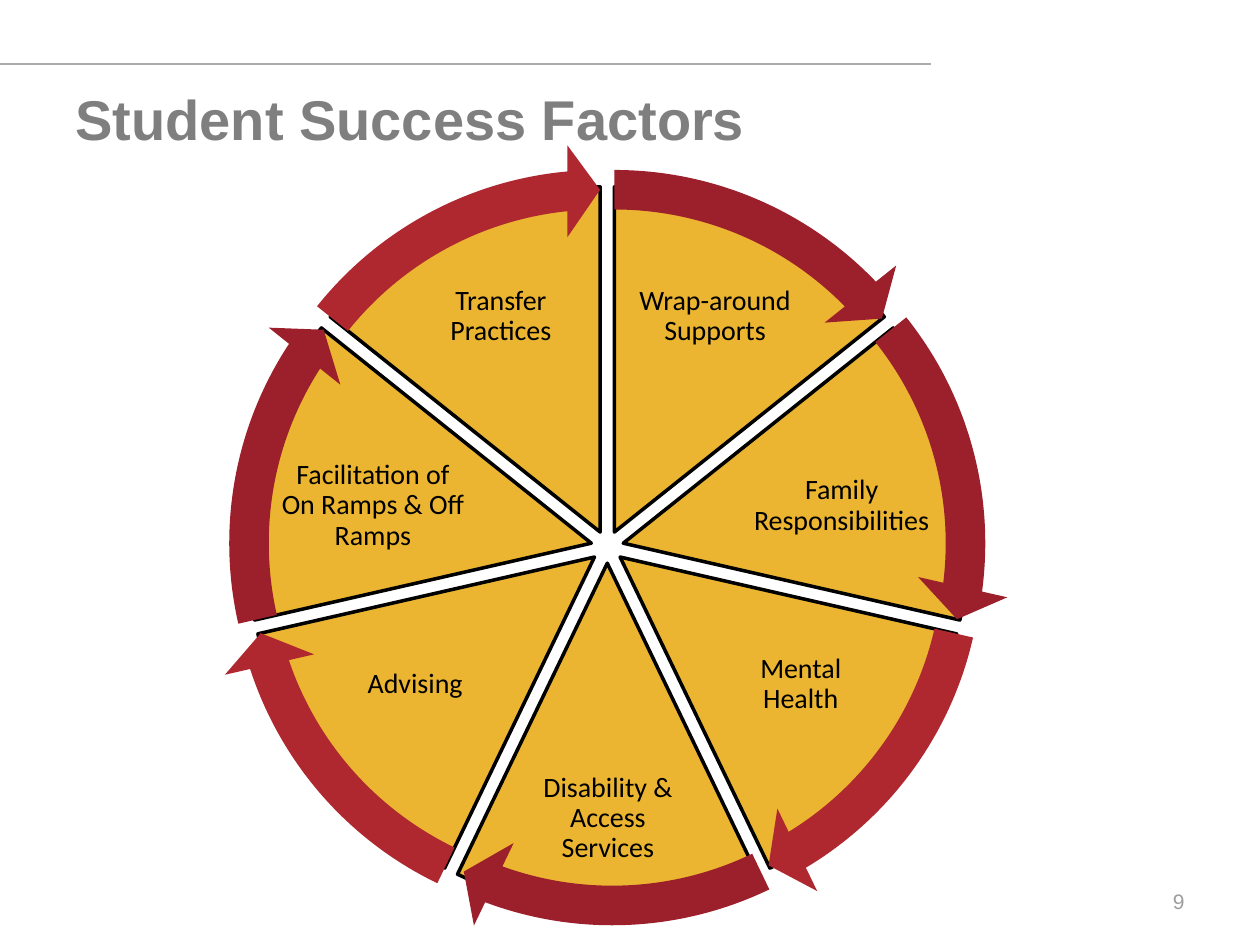
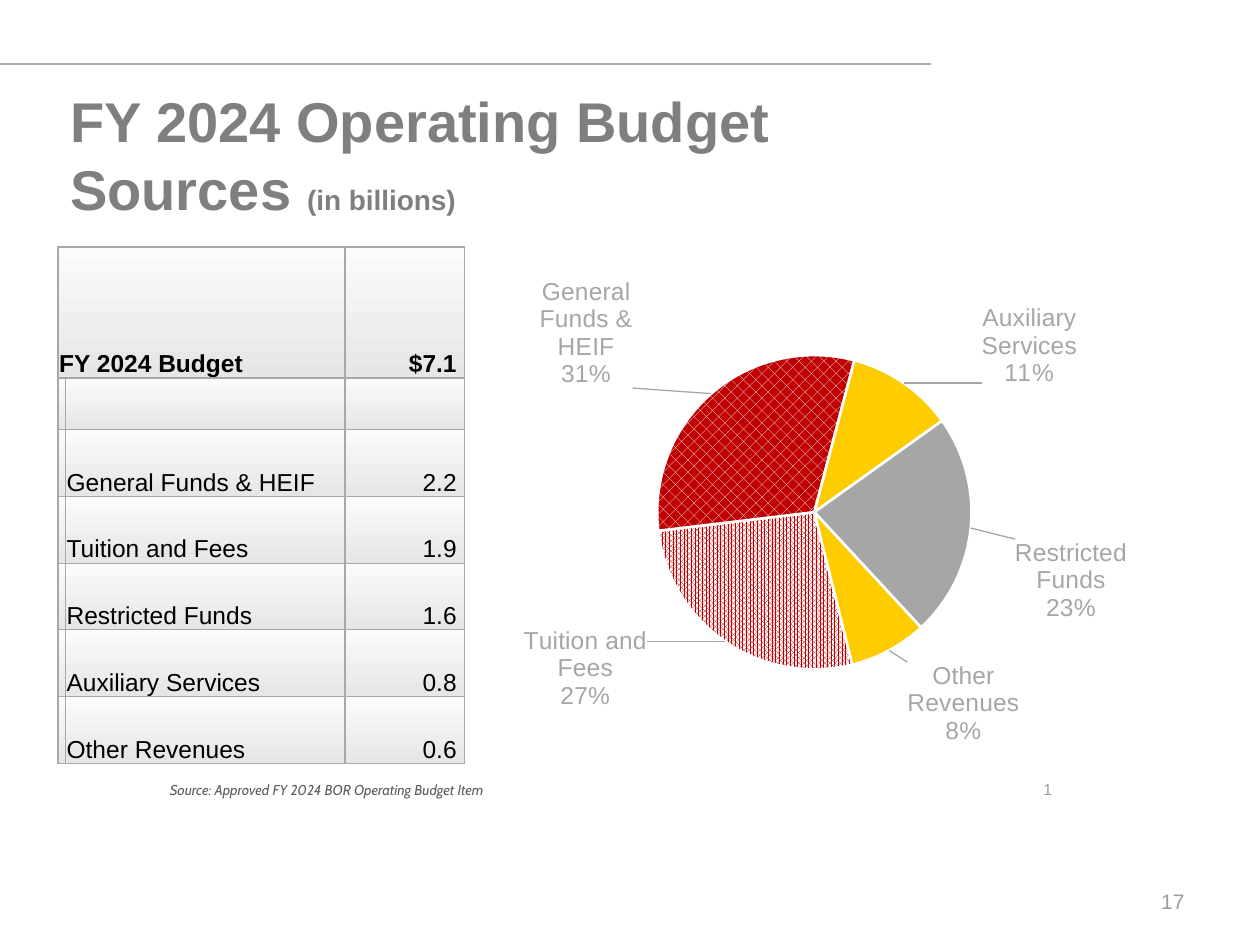
"""Build two slides: student success factors and operating budget sources."""
import math
from dataclasses import dataclass

import lxml.etree
import pptx
import pptx.chart.data
import pptx.dml.color
import pptx.enum.chart
import pptx.enum.dml
import pptx.enum.shapes
import pptx.enum.text
import pptx.oxml
import pptx.oxml.ns
import pptx.util

Inches = pptx.util.Inches
Pt = pptx.util.Pt
Align = pptx.enum.text.PP_ALIGN
Anchor = pptx.enum.text.MSO_ANCHOR
Pattern = pptx.enum.dml.MSO_PATTERN
Shape = pptx.enum.shapes.MSO_SHAPE
qn = pptx.oxml.ns.qn


@dataclass(frozen=True)
class Theme:
    font: str = "Arial"
    wheel_font: str = "Calibri"
    source_font: str = "Cabin"
    title: str = "7F7F7F"
    rule: str = "ACACAC"
    footer: str = "9D9D9D"
    ink: str = "000000"
    white: str = "FFFFFF"
    source: str = "5F5F5F"
    gold: str = "EBB531"
    dark_red: str = "9C202B"
    red: str = "AF272F"
    border: str = "A8A8A8"
    cell_top: str = "FBFBFB"
    cell_bottom: str = "E6E6E6"
    chart_red: str = "C00000"
    chart_gold: str = "FFCC00"
    chart_gray: str = "A6A6A6"
    title_size: float = 32
    subtitle_size: float = 16
    wheel_size: float = 16
    body_size: float = 14
    footer_size: float = 12
    page_size: float = 9
    source_size: float = 8.2


THEME = Theme()


@dataclass(frozen=True)
class Factor:
    label: str
    box: tuple[float, float, float, float]
    arrow_color: str
    arrow_nudge: float = 0


@dataclass(frozen=True)
class Slice:
    name: str
    percent: int
    color: str
    label_shift: tuple[float, float]
    pattern: Pattern | None = None
    back: str = THEME.white


FACTORS = (
    Factor("Wrap-around Supports", (5.02, 1.99, 1.31, 1.04), THEME.dark_red),
    Factor("Family Responsibilities", (5.93, 3.56, 1.5, 0.91), THEME.dark_red),
    Factor("Mental Health", (5.7, 4.93, 1.31, 1.01), THEME.red),
    Factor("Disability & Access Services", (4.19, 6.04, 1.27, 0.91), THEME.dark_red, 0.04),
    Factor("Advising", (2.64, 4.93, 1.31, 1.01), THEME.red),
    Factor("Facilitation of On Ramps & Off Ramps", (2.21, 3.56, 1.5, 0.91), THEME.dark_red),
    Factor("Transfer Practices", (3.32, 1.99, 1.31, 1.04), THEME.red),
)
SLICES = (
    Slice("Tuition and Fees", 27, THEME.chart_red, (-0.1, -0.04), Pattern.PERCENT_80),
    Slice("General Funds & HEIF", 31, THEME.white, (-0.1, 0), Pattern.PERCENT_30, THEME.chart_red),
    Slice("Auxiliary Services", 11, THEME.chart_gold, (0.1, 0.02)),
    Slice("Restricted Funds", 23, THEME.chart_gray, (0.05, 0.02)),
    Slice("Other Revenues", 8, THEME.chart_gold, (0.02, 0.01)),
)
BUDGET = (
    ("General Funds & HEIF", "2.2 "),
    ("Tuition and Fees", "1.9 "),
    ("Restricted Funds", "1.6 "),
    ("Auxiliary Services", "0.8 "),
    ("Other Revenues", "0.6 "),
)


def rgb(color: str) -> pptx.dml.color.RGBColor:
    """Return a colour object for a hex string."""
    return pptx.dml.color.RGBColor.from_string(color)


def write_text(frame, text: str, *, size: float, color: str = THEME.ink, font: str = THEME.font,
               bold: bool = False, italic: bool = False, align=Align.LEFT, spacing: float = 1.0) -> None:
    """Append a formatted run to the first paragraph of a frame."""
    paragraph = frame.paragraphs[0]
    paragraph.alignment = align
    paragraph.line_spacing = spacing
    run = paragraph.add_run()
    run.text = text
    run.font.name, run.font.size = font, Pt(size)
    run.font.bold, run.font.italic = bold, italic
    run.font.color.rgb = rgb(color)


def add_frame(slide, box: tuple, anchor=Anchor.TOP, margins: tuple = (0.1, 0.05, 0.1, 0.05)):
    """Add a wrapping text box and return its frame."""
    frame = slide.shapes.add_textbox(*map(Inches, box)).text_frame
    frame.word_wrap = True
    frame.vertical_anchor = anchor
    (frame.margin_left, frame.margin_top,
     frame.margin_right, frame.margin_bottom) = map(Inches, margins)
    return frame


def add_base_slide(presentation, number: str):
    """Add a blank slide with the top rule and page number."""
    slide = presentation.slides.add_slide(presentation.slide_layouts[6])
    rule = slide.shapes.add_connector(pptx.enum.shapes.MSO_CONNECTOR.STRAIGHT,
                                      Inches(0), Inches(0.51), Inches(7.39), Inches(0.51))
    rule.line.color.rgb = rgb(THEME.rule)
    rule.line.width = Pt(1.25)
    lxml.etree.SubElement(rule._element.spPr, qn("a:effectLst"))
    write_text(add_frame(slide, (7.17, 6.95, 2.33, 0.4), Anchor.MIDDLE), number,
               size=THEME.footer_size, color=THEME.footer, align=Align.RIGHT)
    return slide


def add_title(slide, text: str, box: tuple, spacing: float = 1.0, right_margin: float = 0.1):
    """Add the slide title and return its frame."""
    frame = add_frame(slide, box, margins=(0.1, 0.05, right_margin, 0.05))
    write_text(frame, text, size=THEME.title_size, color=THEME.title, bold=True, spacing=spacing)
    return frame


def add_wheel_part(slide, kind, middle: float, size: float, fill: str,
                   adjustments: tuple, nudge: float = 0):
    """Add one part of the wheel, moved outwards along its middle angle."""
    left = 4.82 - size / 2 + 0.13 * math.cos(middle) + nudge
    top = 4.34 - size / 2 + 0.13 * math.sin(middle)
    shape = slide.shapes.add_shape(kind, *map(Inches, (left, top, size, size)))
    shape.shadow.inherit = False
    for index, value in enumerate(adjustments):
        shape.adjustments[index] = value
    shape.fill.solid()
    shape.fill.fore_color.rgb = rgb(fill)
    shape.line.fill.background()
    return shape


def add_wheel(slide) -> None:
    """Draw the sectors with their labels, then the arrows around them."""
    circle = 216
    step = circle / len(FACTORS)
    starts = [(162 + step * index) % circle for index in range(len(FACTORS))]
    middles = [math.tau * (start + step / 2) / circle for start in starts]
    for factor, start, middle in zip(FACTORS, starts, middles):
        sector = add_wheel_part(slide, Shape.PIE, middle, 5.48, THEME.gold,
                                (start, (start + step) % circle))
        sector.line.color.rgb = rgb(THEME.ink)
        sector.line.width = Pt(2)
        write_text(add_frame(slide, factor.box, Anchor.MIDDLE, (0.02,) * 4), factor.label,
                   size=THEME.wheel_size, font=THEME.wheel_font, align=Align.CENTER, spacing=0.9)
    for factor, start, middle in zip(FACTORS, starts, middles):
        end = (start + step - 3.28) % circle
        add_wheel_part(slide, Shape.CIRCULAR_ARROW, middle, 6.16, factor.arrow_color,
                       (0.051, 3.275, end, start, 0.059), factor.arrow_nudge)


def style_cell(cell) -> None:
    """Give a cell its margins, gradient and thin borders."""
    cell.margin_left = cell.margin_right = cell.margin_top = Inches(0.01)
    cell.margin_bottom = 0
    cell.vertical_anchor = Anchor.BOTTOM
    cell.fill.gradient()
    cell.fill.gradient_angle = 270
    for stop, color in zip(cell.fill.gradient_stops, (THEME.cell_top, THEME.cell_bottom)):
        stop.color.rgb = rgb(color)
    properties = cell._tc.get_or_add_tcPr()
    for index, side in enumerate(("lnL", "lnR", "lnT", "lnB")):
        properties.insert(index, pptx.oxml.parse_xml(
            f'<a:{side} {pptx.oxml.ns.nsdecls("a")} w="{Pt(0.75)}"><a:solidFill>'
            f'<a:srgbClr val="{THEME.border}"/></a:solidFill></a:{side}>'))


def add_budget_table(slide) -> None:
    """Add the budget table with a total row above the sources."""
    widths = (0.05, 2.22, 0.95)
    heights = (1.04, 0.41) + (0.53,) * len(BUDGET)
    table = slide.shapes.add_table(len(heights), len(widths),
                                   *map(Inches, (0.46, 1.96, 3.22, 4.09))).table
    table.first_row = table.horz_banding = False
    for column, width in zip(table.columns, widths):
        column.width = Inches(width)
    for row, height in zip(table.rows, heights):
        row.height = Inches(height)
        for cell in row.cells:
            style_cell(cell)
    table.cell(0, 0).merge(table.cell(0, 1))
    write_text(table.cell(0, 0).text_frame, "FY 2024 Budget", size=THEME.body_size, bold=True)
    write_text(table.cell(0, 2).text_frame, "$7.1 ", size=THEME.body_size, bold=True,
               align=Align.RIGHT)
    for row, (name, amount) in enumerate(BUDGET, start=2):
        write_text(table.cell(row, 1).text_frame, name, size=THEME.body_size)
        write_text(table.cell(row, 2).text_frame, amount, size=THEME.body_size, align=Align.RIGHT)


def manual_layout(**values: float) -> str:
    """Return layout XML for a chart element."""
    return ("<c:layout><c:manualLayout>"
            + "".join(f'<c:{key} val="{value}"/>' for key, value in values.items())
            + "</c:manualLayout></c:layout>")


def pie_labels():
    """Return the label element with names, percentages and leader lines."""
    shows = "".join(f'<c:show{name} val="{int(name in ("CatName", "Percent"))}"/>' for name in
                    ("LegendKey", "Val", "CatName", "SerName", "Percent", "BubbleSize"))
    shared = f'<c:dLblPos val="outEnd"/>{shows}<c:separator>\n</c:separator>'
    fill = f'<a:solidFill><a:srgbClr val="{THEME.chart_gray}"/></a:solidFill>'
    look = ('<c:numFmt formatCode="0%" sourceLinked="0"/><c:spPr><a:noFill/></c:spPr>'
            f'<c:txPr><a:bodyPr/><a:p><a:pPr><a:defRPr sz="{THEME.body_size * 100}">{fill}'
            f'<a:latin typeface="{THEME.font}"/></a:defRPr></a:pPr></a:p></c:txPr>')
    points = "".join(
        f'<c:dLbl><c:idx val="{index}"/>'
        f'{manual_layout(x=part.label_shift[0], y=part.label_shift[1])}{look}{shared}</c:dLbl>'
        for index, part in enumerate(SLICES))
    return pptx.oxml.parse_xml(
        f'<c:dLbls {pptx.oxml.ns.nsdecls("c", "a")}>{points}{look}{shared}'
        f'<c:showLeaderLines val="1"/><c:leaderLines><c:spPr><a:ln w="9525">{fill}</a:ln>'
        '</c:spPr></c:leaderLines></c:dLbls>')


def add_budget_chart(slide) -> None:
    """Add the pie of budget shares."""
    data = pptx.chart.data.CategoryChartData()
    data.categories = [part.name for part in SLICES]
    data.add_series("Series 1", [part.percent for part in SLICES])
    chart = slide.shapes.add_chart(pptx.enum.chart.XL_CHART_TYPE.PIE,
                                   *map(Inches, (3.68, 1.96, 5.86, 4.09)), data).chart
    chart.has_title = chart.has_legend = False
    chart.font.name, chart.font.size = THEME.wheel_font, Pt(10)
    chart.font.color.rgb = rgb(THEME.source)
    plot = chart.plots[0]
    plot.vary_by_categories = True
    series = plot.series[0]
    for index, part in enumerate(SLICES):
        style = series.points[index].format
        if part.pattern is None:
            style.fill.solid()
        else:
            style.fill.patterned()
            style.fill.pattern = part.pattern
            style.fill.back_color.rgb = rgb(part.back)
        style.fill.fore_color.rgb = rgb(part.color)
        style.line.color.rgb = rgb(THEME.white)
        style.line.width = Pt(1.5)
    series._element.find(qn("c:cat")).addprevious(pie_labels())
    pie = plot._element
    for angle in pie.findall(qn("c:firstSliceAng")):
        pie.remove(angle)
    lxml.etree.SubElement(pie, qn("c:firstSliceAng")).set("val", "166")
    area = pie.getparent()
    for layout in area.findall(qn("c:layout")):
        area.remove(layout)
    holder = pptx.oxml.parse_xml(
        f'<c:plotArea {pptx.oxml.ns.nsdecls("c")}>'
        + manual_layout(layoutTarget="inner", xMode="edge", yMode="edge",
                        x=0.26, y=0.21, w=0.43, h=0.61) + "</c:plotArea>")
    area.insert(0, holder[0])


def main() -> None:
    """Build and save the presentation."""
    presentation = pptx.Presentation()
    presentation.slide_width, presentation.slide_height = Inches(10), Inches(7.5)

    factors_slide = add_base_slide(presentation, "9")
    add_title(factors_slide, "Student Success Factors", (0.5, 0.68, 5.56, 1.1), spacing=0.9)
    add_wheel(factors_slide)

    budget_slide = add_base_slide(presentation, "17")
    add_budget_table(budget_slide)
    title = add_title(budget_slide, "FY 2024 Operating Budget Sources ",
                      (0.46, 0.64, 7.63, 0.82), right_margin=0.4)
    write_text(title, "(in billions)", size=THEME.subtitle_size, color=THEME.title, bold=True)
    add_budget_chart(budget_slide)
    write_text(add_frame(budget_slide, (1.25, 6.15, 2.93, 0.24)),
               "Source: Approved FY 2024 BOR Operating Budget Item", size=THEME.source_size,
               color=THEME.source, font=THEME.source_font, italic=True)
    write_text(add_frame(budget_slide, (6.09, 6.15, 2.33, 0.3), margins=(0.07, 0.04, 0.07, 0.04)),
               "1", size=THEME.page_size, color=THEME.footer, align=Align.RIGHT)
    presentation.save("out.pptx")


if __name__ == "__main__":
    main()
